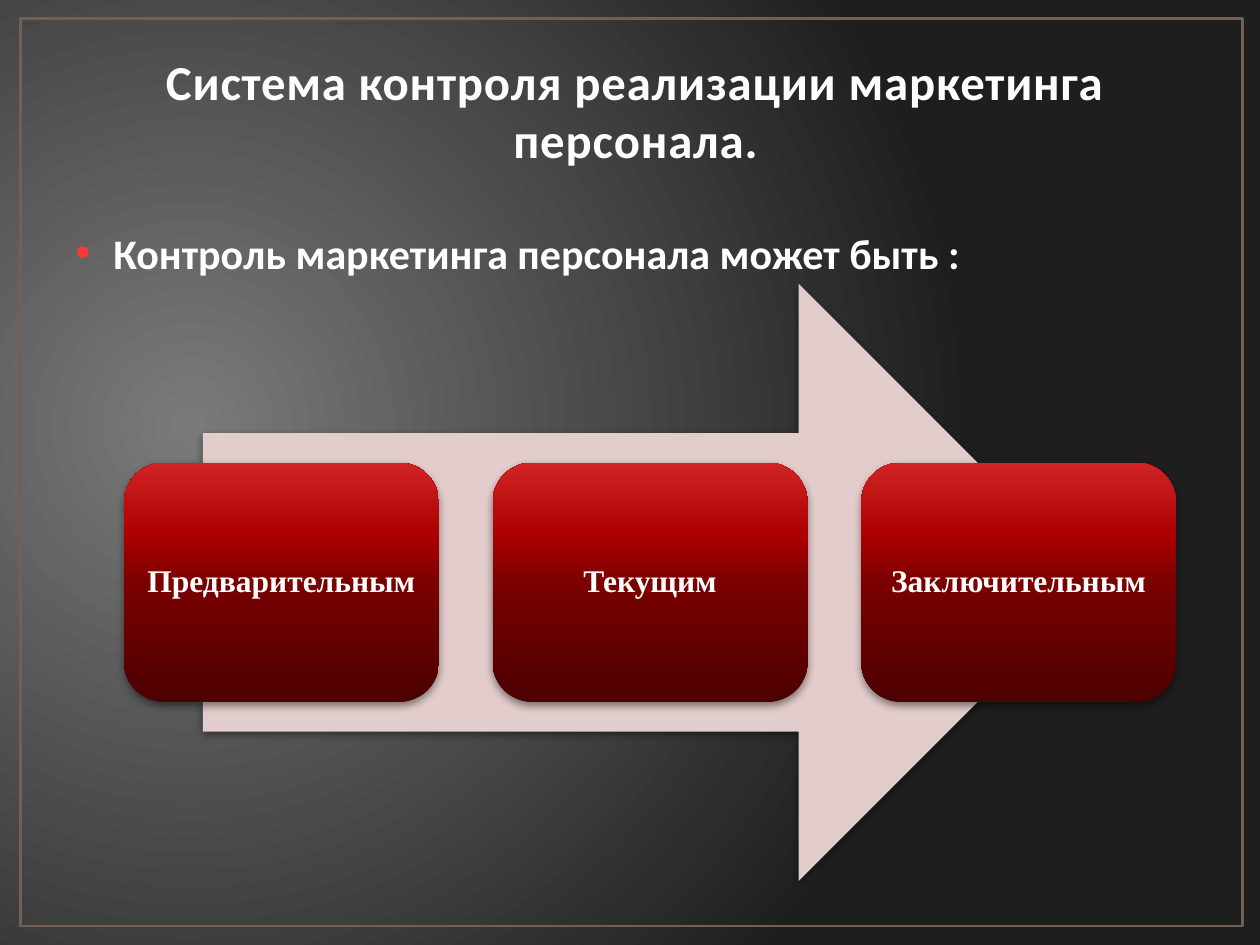
from lxml.etree import SubElement
from pptx import Presentation
from pptx.dml.color import RGBColor
from pptx.enum.shapes import MSO_SHAPE
from pptx.enum.text import MSO_ANCHOR, MSO_AUTO_SIZE, PP_ALIGN
from pptx.oxml.ns import qn
from pptx.util import Cm, Pt

HEADING = "Система контроля реализации маркетинга персонала."
INTRO = "Контроль маркетинга персонала может быть\u00a0:"
STAGES = ["Предварительным", "Текущим", "Заключительным"]

WHITE = RGBColor(0xFF, 0xFF, 0xFF)
HEADING_WHITE = RGBColor(0xFE, 0xFE, 0xFE)
BLACK = RGBColor(0, 0, 0)
FRAME_BROWN = RGBColor(0x72, 0x60, 0x56)
BULLET_RED = RGBColor(0xFE, 0x37, 0x37)
ARROW_PINK = RGBColor(0xE3, 0xCC, 0xCC)
BACKDROP = [(0, RGBColor(0x7A, 0x7A, 0x7A)), (100, RGBColor(0x1E, 0x1E, 0x1E))]
STAGE_REDS = [
    (0, RGBColor(0x4C, 0, 0)),
    (50, RGBColor(0x7B, 0, 0)),
    (70, RGBColor(0xAD, 0, 0)),
    (100, RGBColor(0xD0, 0x24, 0x24)),
]

FRAME_BOX = (Cm(0.41), Cm(0.38), Cm(24.64), Cm(18.29))
HEADING_BOX = (Cm(1.5), Cm(1.52), Cm(22.63), Cm(3.2))
INTRO_BOX = (Cm(1.27), Cm(4.45), Cm(22.86), Cm(12.57))
ARROW_BOX = (Cm(4.09), Cm(5.72), Cm(18.03), Cm(12.04))
STAGE_WIDTH, STAGE_HEIGHT, STAGE_GAP = Cm(6.35), Cm(4.83), Cm(1.08)
STAGE_INSET = Cm(0.18)

HEADING_FONT = {"name": "Calibri", "size": Pt(27.9), "bold": True}
INTRO_FONT = {"name": "Calibri", "size": Pt(24), "bold": True}
STAGE_FONT = {"name": "Times New Roman", "size": Pt(18), "bold": True}
HEADING_FRAME = {"vertical_anchor": MSO_ANCHOR.BOTTOM, "margin_bottom": Cm(1.32)}
INTRO_FRAME = {"vertical_anchor": MSO_ANCHOR.TOP}
STAGE_FRAME = {
    "vertical_anchor": MSO_ANCHOR.MIDDLE,
    **{f"margin_{side}": STAGE_INSET for side in ("left", "top", "right", "bottom")},
}
CENTERED = {"alignment": PP_ALIGN.CENTER}
STAGE_PARAGRAPH = {**CENTERED, "line_spacing": 0.9, "space_after": Pt(6.3)}
INTRO_PARAGRAPH = {"alignment": PP_ALIGN.LEFT, "space_before": Pt(4.8)}


def apply(target, values):
    for name, value in values.items():
        setattr(target, name, value)


def place(shape, box):
    apply(shape, dict(zip(("left", "top", "width", "height"), box)))


def write(shape, text, font, color, frame, paragraph_format):
    text_frame = shape.text_frame
    apply(text_frame, {"word_wrap": True, "auto_size": MSO_AUTO_SIZE.NONE, **frame})
    paragraph = text_frame.paragraphs[0]
    apply(paragraph, paragraph_format)
    run = paragraph.add_run()
    run.text = text
    apply(run.font, font)
    run.font.color.rgb = color
    return paragraph, run


def set_stops(gradient, stops):
    stop_list = gradient.find(qn("a:gsLst"))
    for old_stop in list(stop_list):
        stop_list.remove(old_stop)
    for percent, color in stops:
        stop = SubElement(stop_list, qn("a:gs"), pos=str(percent * 1000))
        SubElement(stop, qn("a:srgbClr"), val=str(color))


def paint_backdrop(slide):
    slide.background.fill.gradient()
    gradient = slide.element.find(".//" + qn("a:gradFill"))
    set_stops(gradient, BACKDROP)
    gradient.remove(gradient.find(qn("a:lin")))
    circle = SubElement(gradient, qn("a:path"), path="circle")
    SubElement(circle, qn("a:fillToRect"), l="15000", t="50000", r="85000", b="60000")


def add_soft_shadow(shape):
    shape.shadow.inherit = False
    effects = shape.element.spPr.find(qn("a:effectLst"))
    shadow = SubElement(effects, qn("a:outerShdw"), blurRad=str(Pt(5)), dist=str(Pt(2)),
                        dir="5400000", rotWithShape="0")
    color = SubElement(shadow, qn("a:srgbClr"), val=str(BLACK))
    SubElement(color, qn("a:alpha"), val="43000")


def add_bullet(paragraph):
    properties = paragraph._p.get_or_add_pPr()
    properties.set("marL", str(Cm(0.76)))
    properties.set("indent", str(-Cm(0.76)))
    color = SubElement(properties, qn("a:buClr"))
    SubElement(color, qn("a:srgbClr"), val=str(BULLET_RED))
    SubElement(properties, qn("a:buFont"), typeface="Arial")
    SubElement(properties, qn("a:buChar"), char="•")


def add_frame(slide):
    frame = slide.shapes.add_shape(MSO_SHAPE.RECTANGLE, *FRAME_BOX)
    frame.shadow.inherit = False
    frame.fill.background()
    frame.line.color.rgb = FRAME_BROWN
    frame.line.width = Pt(1.5)


def add_arrow(slide):
    arrow = slide.shapes.add_shape(MSO_SHAPE.RIGHT_ARROW, *ARROW_BOX)
    arrow.fill.solid()
    arrow.fill.fore_color.rgb = ARROW_PINK
    arrow.line.fill.background()
    add_soft_shadow(arrow)
    return arrow


def add_stages(slide, arrow):
    pitch = STAGE_WIDTH + STAGE_GAP
    row_width = len(STAGES) * pitch - STAGE_GAP
    left = arrow.left + (arrow.width - row_width) // 2
    top = arrow.top + (arrow.height - STAGE_HEIGHT) // 2
    for index, label in enumerate(STAGES):
        stage = slide.shapes.add_shape(MSO_SHAPE.ROUNDED_RECTANGLE, left + index * pitch, top,
                                       STAGE_WIDTH, STAGE_HEIGHT)
        stage.fill.gradient()
        stage.fill.gradient_angle = 90
        set_stops(stage.element.spPr.find(qn("a:gradFill")), STAGE_REDS)
        stage.line.fill.background()
        add_soft_shadow(stage)
        write(stage, label, STAGE_FONT, WHITE, STAGE_FRAME, STAGE_PARAGRAPH)


def main():
    deck = Presentation()
    deck.slide_width, deck.slide_height = Cm(25.4), Cm(19.05)
    slide = deck.slides.add_slide(deck.slide_layouts[1])
    paint_backdrop(slide)
    add_frame(slide)

    heading, intro = slide.placeholders
    place(heading, HEADING_BOX)
    _, heading_run = write(heading, HEADING, HEADING_FONT, HEADING_WHITE, HEADING_FRAME, CENTERED)
    heading_run.font._element.set("spc", "50")

    place(intro, INTRO_BOX)
    intro_paragraph, _ = write(intro, INTRO, INTRO_FONT, WHITE, INTRO_FRAME, INTRO_PARAGRAPH)
    add_bullet(intro_paragraph)

    add_stages(slide, add_arrow(slide))
    deck.save("out.pptx")


if __name__ == "__main__":
    main()
